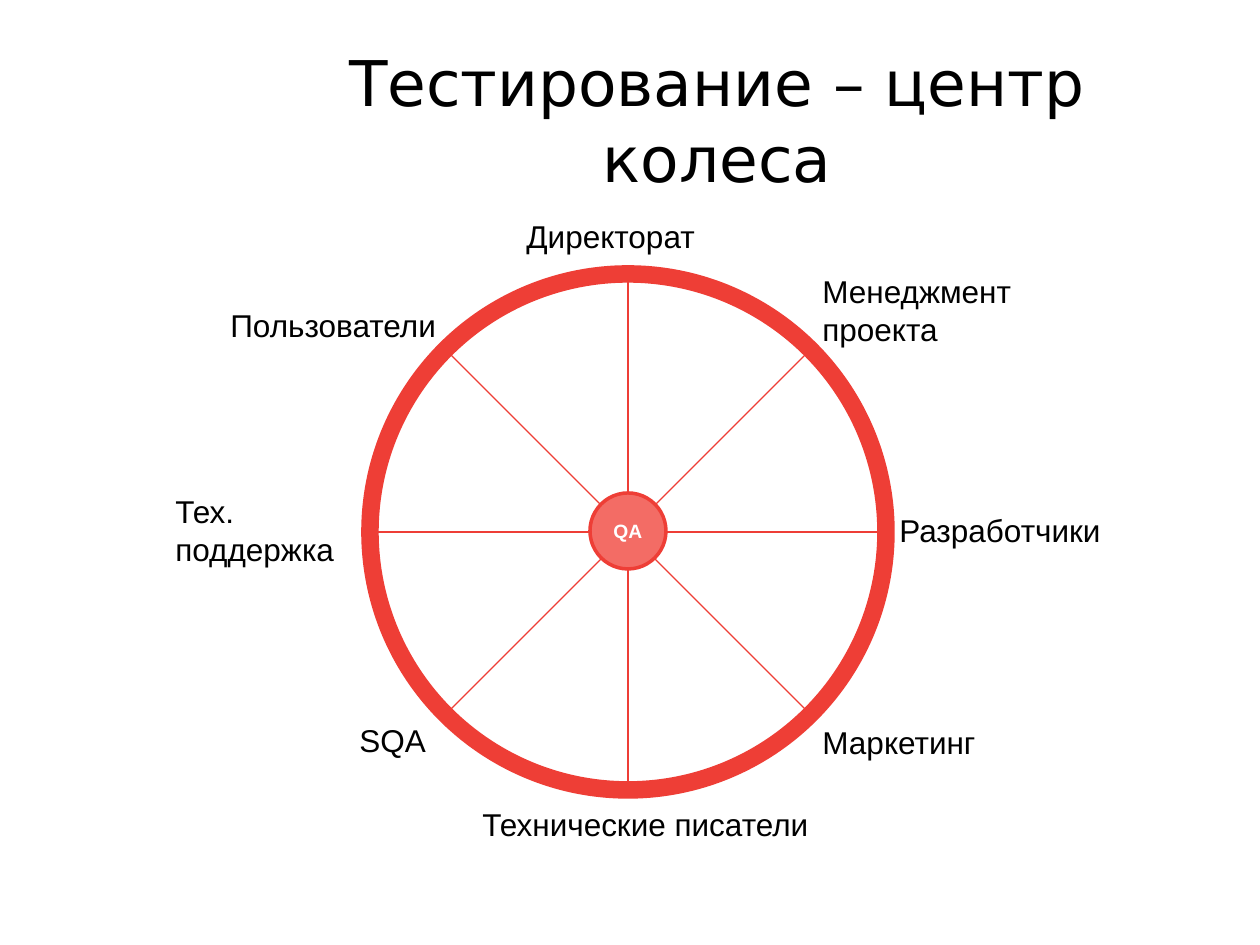
import math
from dataclasses import dataclass

from lxml import etree
from pptx import Presentation
from pptx import util as u
from pptx.dml.color import RGBColor
from pptx.enum import shapes, text
from pptx.oxml.ns import qn


@dataclass(frozen=True)
class Theme:
    red: str = "EE3E36"
    hub: str = "F36C65"
    black: str = "000000"
    white: str = "FFFFFF"
    title_font: str = "DejaVu Sans"
    body_font: str = "Arial"
    title_size: int = 36
    label_size: int = 18
    hub_size: int = 11
    rim_width: int = 10
    hub_width: int = 2
    spoke_width: float = 0.75


THEME = Theme()
EMU_PER_PX = 914400 / 126

CENTER = (628, 532)
RADIUS = 258
HUB_CENTER = (628, 531)
HUB_RADIUS = 38
SPOKE_LINES = 4

# text, left, top, width, height
LABELS = [
    ("Директорат", 514, 211, 335, 50),
    ("Пользователи", 218, 300, 252, 50),
    ("Тех. поддержка", 163, 486, 188, 89),
    ("SQA", 347, 715, 197, 50),
    ("Менеджмент проекта", 810, 266, 214, 89),
    ("Разработчики", 887, 505, 242, 50),
    ("Маркетинг", 810, 717, 183, 50),
    ("Технические писатели", 470, 799, 372, 50),
]


def px(*values):
    return [u.Emu(round(v * EMU_PER_PX)) for v in values]


def rgb(color):
    return RGBColor.from_string(color)


def style_paragraph(p, font, size, color, align, bold=False):
    p.alignment = align
    p.font.name = font
    p.font.size = u.Pt(size)
    p.font.bold = bold
    p.font.color.rgb = rgb(color)


def style_line(sp, width):
    sp.line.color.rgb = rgb(THEME.red)
    sp.line.width = u.Pt(width)


def set_title(slide, wording, *box):
    sp = slide.shapes.title
    sp.left, sp.top, sp.width, sp.height = px(*box)
    tf = sp.text_frame
    tf.text = wording
    tf.word_wrap = True
    tf.auto_size = text.MSO_AUTO_SIZE.NONE
    tf.vertical_anchor = text.MSO_ANCHOR.MIDDLE
    style_paragraph(tf.paragraphs[0], THEME.title_font, THEME.title_size,
                    THEME.black, text.PP_ALIGN.CENTER)


def add_circle(slide, center, radius, line_width, fill=None):
    x, y = center
    sp = slide.shapes.add_shape(
        shapes.MSO_SHAPE.OVAL,
        *px(x - radius, y - radius, 2 * radius, 2 * radius))
    sp.shadow.inherit = False
    if fill:
        sp.fill.solid()
        sp.fill.fore_color.rgb = rgb(fill)
    else:
        sp.fill.background()
    style_line(sp, line_width)
    return sp


def add_spokes(slide):
    """Draw evenly turned diameters across the wheel."""
    x, y = CENTER
    for i in range(SPOKE_LINES):
        angle = math.pi * i / SPOKE_LINES
        dx = round(RADIUS * math.cos(angle))
        dy = round(RADIUS * math.sin(angle))
        line = slide.shapes.add_connector(
            shapes.MSO_CONNECTOR.STRAIGHT,
            *px(x - dx, y - dy, x + dx, y + dy))
        style_line(line, THEME.spoke_width)
        etree.SubElement(line._element.spPr, qn("a:effectLst"))


def add_hub(slide, wording):
    sp = add_circle(slide, HUB_CENTER, HUB_RADIUS, THEME.hub_width, THEME.hub)
    tf = sp.text_frame
    tf.margin_left = tf.margin_right = tf.margin_top = tf.margin_bottom = 0
    tf.vertical_anchor = text.MSO_ANCHOR.MIDDLE
    tf.text = wording
    style_paragraph(tf.paragraphs[0], THEME.body_font, THEME.hub_size,
                    THEME.white, text.PP_ALIGN.CENTER, bold=True)


def add_label(slide, wording, *box):
    tf = slide.shapes.add_textbox(*px(*box)).text_frame
    tf.word_wrap = True
    tf.auto_size = text.MSO_AUTO_SIZE.SHAPE_TO_FIT_TEXT
    tf.text = wording
    style_paragraph(tf.paragraphs[0], THEME.body_font, THEME.label_size,
                    THEME.black, text.PP_ALIGN.LEFT)


def main():
    prs = Presentation()
    prs.slide_width, prs.slide_height = px(1260, 945)
    slide = prs.slides.add_slide(prs.slide_layouts[5])
    set_title(slide, "Тестирование – центр колеса", 290, 39, 854, 161)
    add_circle(slide, CENTER, RADIUS, THEME.rim_width)
    add_spokes(slide)
    add_hub(slide, "QA")
    for label in LABELS:
        add_label(slide, *label)
    prs.save("out.pptx")


if __name__ == "__main__":
    main()
